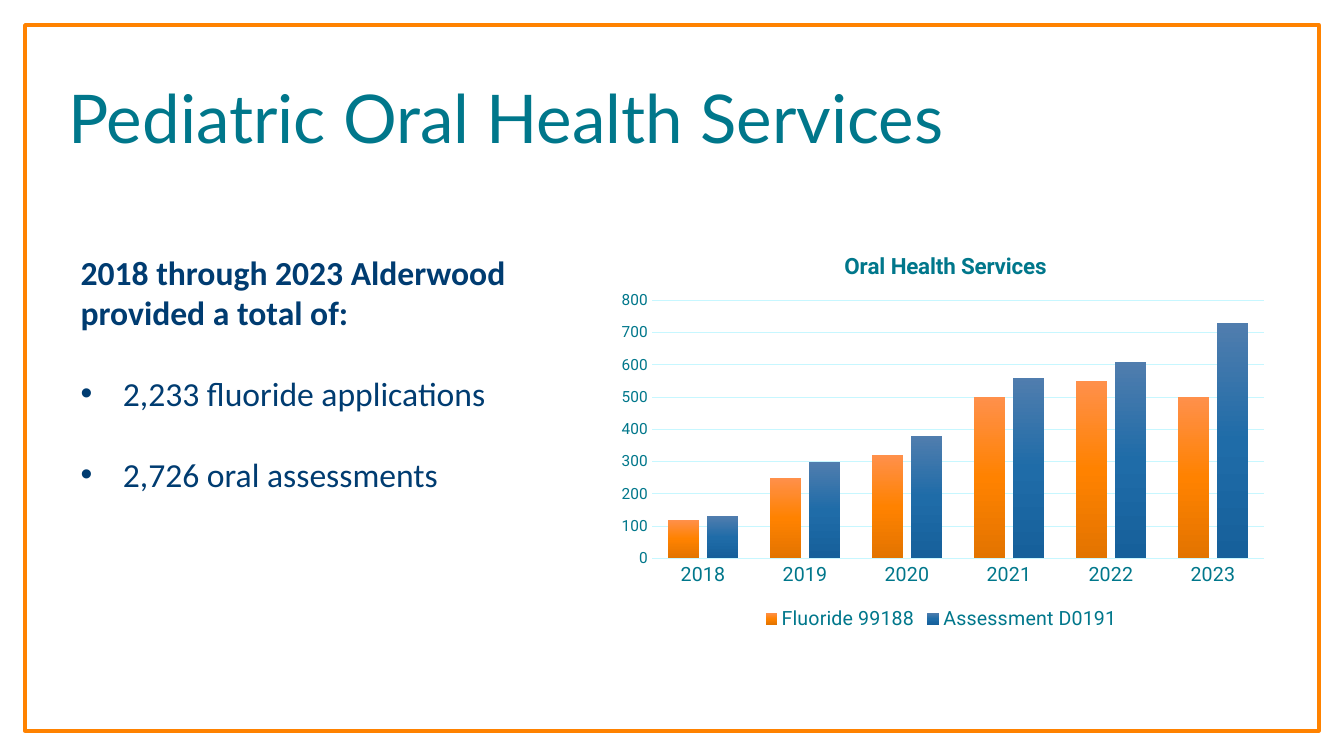
from dataclasses import dataclass

import lxml.etree
import pptx
import pptx.chart.data
import pptx.dml.color
import pptx.enum.chart
import pptx.enum.shapes
import pptx.enum.text
import pptx.oxml
import pptx.oxml.ns
import pptx.util

Inches = pptx.util.Inches
Pt = pptx.util.Pt
qn = pptx.oxml.ns.qn

ORANGE = "FF8200"
TEAL = "00778B"
NAVY = "003C71"
PALE_CYAN = "C7F7FF"


@dataclass
class Statement:
    text: str
    bold: bool = False
    bullet: bool = False


@dataclass
class Service:
    name: str
    yearly_counts: list[int]
    gradient: list[str]


STATEMENTS = [
    Statement("2018 through 2023 Alderwood provided a total of:", bold=True),
    Statement("2,233 fluoride applications", bullet=True),
    Statement("2,726 oral assessments", bullet=True),
]
YEARS = ["2018", "2019", "2020", "2021", "2022", "2023"]
SERVICES = [
    Service("Fluoride 99188", [120, 250, 320, 500, 550, 500], ["FF904B", ORANGE, "E37400"]),
    Service("Assessment D0191", [130, 300, 380, 560, 610, 730], ["507DAE", "1F6CA8", "16609B"]),
]


def color(value: str) -> pptx.dml.color.RGBColor:
    return pptx.dml.color.RGBColor.from_string(value)


def style_font(font, name: str, size: float, hex_color: str, bold: bool = False) -> None:
    font.name = name
    font.size = Pt(size)
    font.bold = bold
    font.color.rgb = color(hex_color)


def add_frame(slide) -> None:
    frame = slide.shapes.add_shape(
        pptx.enum.shapes.MSO_SHAPE.RECTANGLE, Inches(0.25), Inches(0.25), Inches(12.83), Inches(7)
    )
    frame.shadow.inherit = False
    frame.fill.background()
    frame.line.color.rgb = color(ORANGE)
    frame.line.width = Pt(3)


def add_title(slide) -> None:
    box = slide.shapes.add_textbox(Inches(0.58), Inches(0.8), Inches(11.09), Inches(0.81))
    box.text_frame.word_wrap = True
    box.text_frame.vertical_anchor = pptx.enum.text.MSO_ANCHOR.BOTTOM
    run = box.text_frame.paragraphs[0].add_run()
    run.text = "Pediatric Oral Health Services"
    style_font(run.font, "Lato", 48, TEAL)


def add_bullet(paragraph) -> None:
    properties = paragraph._p.get_or_add_pPr()
    indent = Inches(0.42)
    properties.set("marL", str(indent))
    properties.set("indent", str(-indent))
    lxml.etree.SubElement(properties, qn("a:buFont")).set("typeface", "Arial")
    lxml.etree.SubElement(properties, qn("a:buChar")).set("char", "•")


def add_statements(slide) -> None:
    box = slide.shapes.add_textbox(Inches(0.67), Inches(2.43), Inches(5.27), Inches(2.56))
    text_frame = box.text_frame
    text_frame.word_wrap = True
    text_frame.margin_left = text_frame.margin_right = Inches(0.13)
    text_frame.margin_top = text_frame.margin_bottom = Inches(0.07)
    for index, statement in enumerate(STATEMENTS):
        paragraph = text_frame.add_paragraph() if index else text_frame.paragraphs[0]
        if index:
            paragraph.space_before = Pt(29)
        if statement.bullet:
            add_bullet(paragraph)
        run = paragraph.add_run()
        run.text = statement.text
        style_font(run.font, "Calibri", 24, NAVY, statement.bold)


def place_chart_part(element, position: int, layout: dict[str, float], inner: bool = False) -> None:
    """Fix a chart part by fractions of the chart size."""
    for existing in element.findall(qn("c:layout")):
        element.remove(existing)
    holder = pptx.oxml.parse_xml(f"<c:layout {pptx.oxml.ns.nsdecls('c')}><c:manualLayout/></c:layout>")
    settings = {"layoutTarget": "inner"} if inner else {}
    settings |= {"xMode": "edge", "yMode": "edge"}
    settings |= {key: str(fraction) for key, fraction in layout.items()}
    for tag, value in settings.items():
        lxml.etree.SubElement(holder[0], qn(f"c:{tag}")).set("val", value)
    element.insert(position, holder)


def fill_with_gradient(series, colors: list[str]) -> None:
    """Fill the bars from top to bottom with evenly spaced stops."""
    step = 100000 // (len(colors) - 1)
    stops = "".join(
        f'<a:gs pos="{index * step}"><a:srgbClr val="{value}"/></a:gs>'
        for index, value in enumerate(colors)
    )
    gradient = pptx.oxml.parse_xml(
        f'<a:gradFill {pptx.oxml.ns.nsdecls("a")} rotWithShape="1"><a:gsLst>{stops}</a:gsLst>'
        '<a:lin ang="5400000" scaled="0"/></a:gradFill>'
    )
    series.format._element.get_or_add_spPr().insert(0, gradient)


def style_axes(chart) -> None:
    for axis, size in ((chart.category_axis, 14), (chart.value_axis, 11)):
        axis.major_tick_mark = axis.minor_tick_mark = pptx.enum.chart.XL_TICK_MARK.NONE
        style_font(axis.tick_labels.font, "Roboto", size, TEAL)
    chart.value_axis.minimum_scale = 0
    chart.value_axis.maximum_scale = 800
    chart.value_axis.major_unit = 100
    chart.value_axis.format.line.fill.background()
    for line in (chart.category_axis.format.line, chart.value_axis.major_gridlines.format.line):
        line.color.rgb = color(PALE_CYAN)
        line.width = Pt(0.75)


def add_services_chart(slide) -> None:
    data = pptx.chart.data.CategoryChartData()
    data.categories = YEARS
    for service in SERVICES:
        data.add_series(service.name, service.yearly_counts)
    chart = slide.shapes.add_chart(
        pptx.enum.chart.XL_CHART_TYPE.COLUMN_CLUSTERED,
        Inches(6), Inches(2.3), Inches(6.67), Inches(4), data,
    ).chart
    style_font(chart.font, "Roboto", 10, NAVY)

    chart.has_title = True
    run = chart.chart_title.text_frame.paragraphs[0].add_run()
    run.text = "Oral Health Services"
    style_font(run.font, "Roboto", 16, TEAL, bold=True)
    chart.chart_title.include_in_layout = False
    place_chart_part(chart.chart_title._element, 1, {"x": 0.35, "y": 0.04})

    chart.has_legend = True
    chart.legend.position = pptx.enum.chart.XL_LEGEND_POSITION.BOTTOM
    chart.legend.include_in_layout = False
    style_font(chart.legend.font, "Roboto", 14, TEAL)

    style_axes(chart)
    plot = chart.plots[0]
    plot.gap_width = 100
    plot.overlap = -24
    plot.vary_by_categories = False
    for series, service in zip(plot.series, SERVICES):
        fill_with_gradient(series, service.gradient)
    plot_area = chart._chartSpace.chart.plotArea
    place_chart_part(plot_area, 0, {"x": 0.07, "y": 0.17, "w": 0.91, "h": 0.64}, inner=True)


def main() -> None:
    presentation = pptx.Presentation()
    presentation.slide_width = Inches(13.33)
    presentation.slide_height = Inches(7.5)
    slide = presentation.slides.add_slide(presentation.slide_layouts[6])
    add_frame(slide)
    add_title(slide)
    add_statements(slide)
    add_services_chart(slide)
    presentation.save("out.pptx")


if __name__ == "__main__":
    main()
